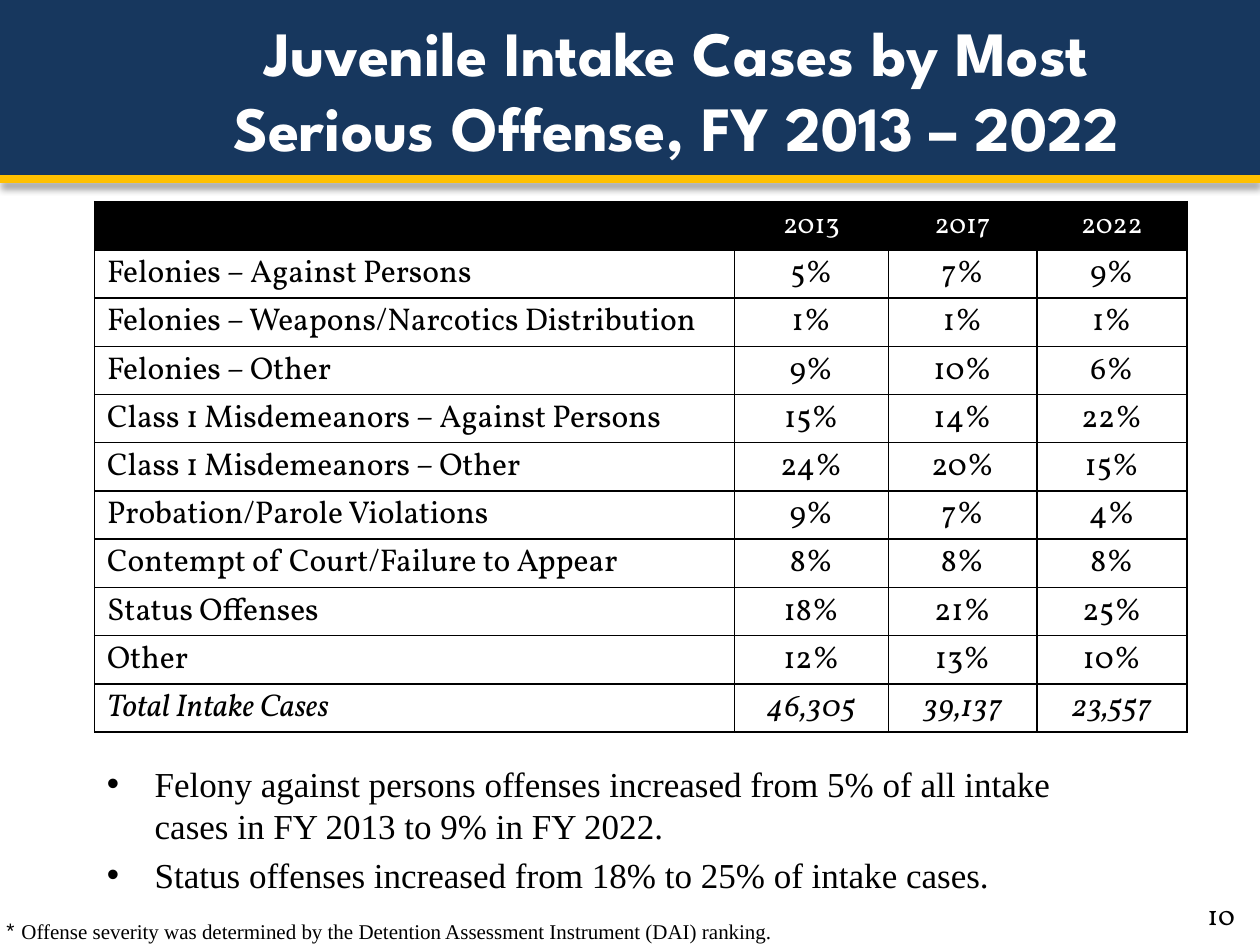
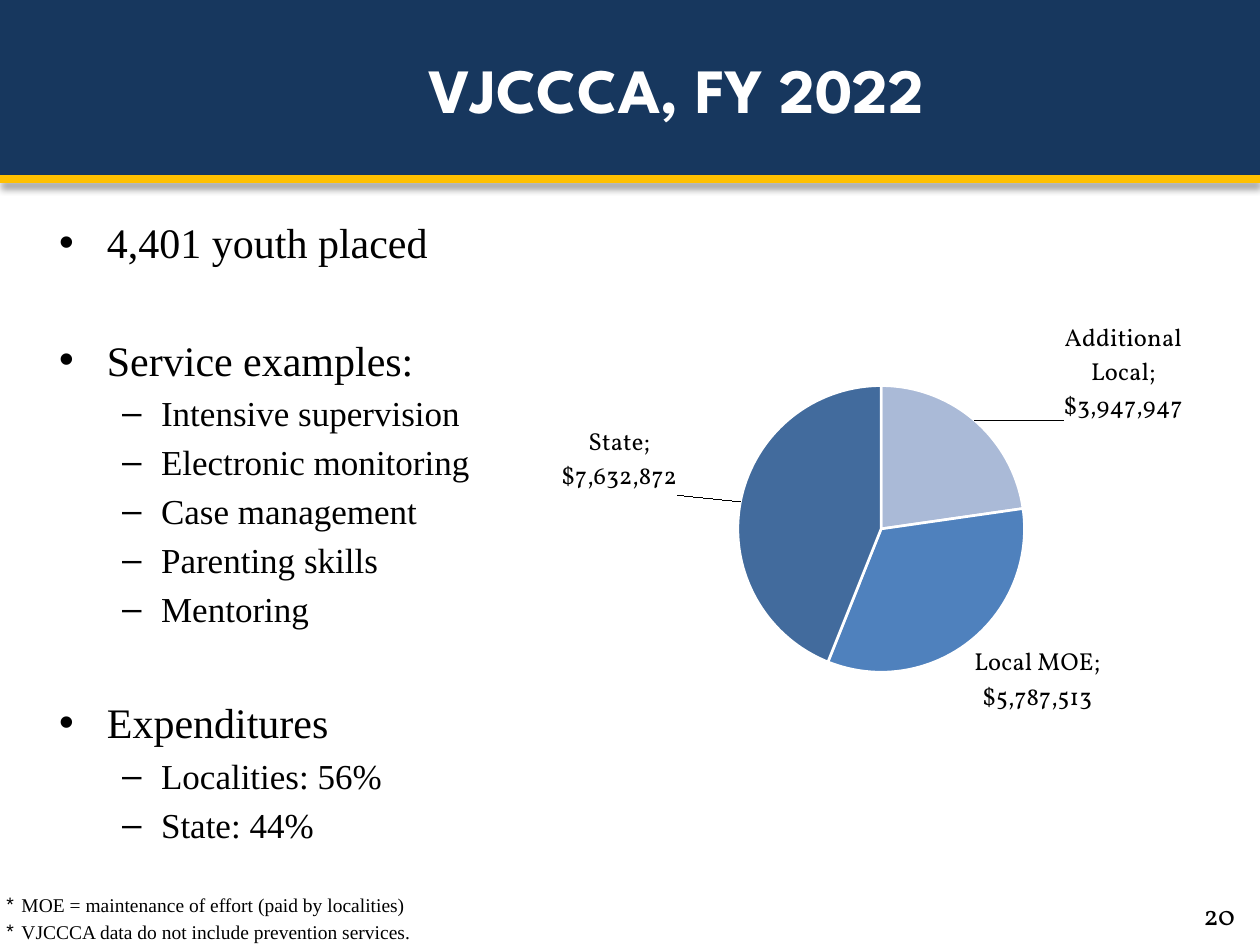
from copy import deepcopy

from pptx import Presentation
from pptx.chart.data import CategoryChartData as ChartData
from pptx.dml.color import RGBColor
from pptx.enum.chart import XL_CHART_TYPE as Kind, XL_LABEL_POSITION as Spot
from pptx.enum.shapes import MSO_CONNECTOR as Link, MSO_SHAPE as Shape
from pptx.enum.text import MSO_ANCHOR as Anchor, MSO_AUTO_SIZE as Fit, PP_ALIGN as Align
from pptx.oxml import parse_xml
from pptx.oxml.ns import nsdecls, qn
from pptx.util import Inches, Pt

NAVY = RGBColor(0x17, 0x37, 0x5E)
GOLD = RGBColor(0xFF, 0xC0, 0x00)
BLACK = RGBColor(0, 0, 0)
WHITE = RGBColor(0xFF, 0xFF, 0xFF)
SLICES = [RGBColor(0xAA, 0xBA, 0xD7), RGBColor(0x4F, 0x81, 0xBD), RGBColor(0x42, 0x6B, 0x9D)]

HEAD, SERIF, OLD = "League Spartan", "Times New Roman", "Vollkorn"
NOTE_BOX = (0, 7.16, 9.08, 0.33)

YEARS = ["", "2013", "2017", "2022"]
CASES = [
    ("Felonies – Against Persons", "5%", "7%", "9%"),
    ("Felonies – Weapons/Narcotics Distribution", "1%", "1%", "1%"),
    ("Felonies – Other", "9%", "10%", "6%"),
    ("Class 1 Misdemeanors – Against Persons", "15%", "14%", "22%"),
    ("Class 1 Misdemeanors – Other", "24%", "20%", "15%"),
    ("Probation/Parole Violations", "9%", "7%", "4%"),
    ("Contempt of Court/Failure to Appear", "8%", "8%", "8%"),
    ("Status Offenses", "18%", "21%", "25%"),
    ("Other", "12%", "13%", "10%"),
    ("Total Intake Cases", "46,305", "39,137", "23,557"),
]
TRENDS = [
    "Felony against persons offenses increased from 5% of all intake cases in FY 2013 "
    "to 9% in FY 2022.",
    "Status offenses increased from 18% to 25% of intake cases.",
]
TOPICS = [
    ("4,401 youth placed", []),
    ("Service examples:", ["Intensive supervision", "Electronic monitoring",
                           "Case management", "Parenting skills", "Mentoring"]),
    ("Expenditures", ["Localities: 56%", "State: 44%"]),
]
FUNDS = {"Additional Local": 3947947, "Local MOE": 5787513, "State": 7632872}


def inches(box):
    return [Inches(n) for n in box]


def style(para, font, size, color=BLACK, bold=False, slant=False):
    for run in para.runs:
        face = run.font
        face.name, face.size, face.bold, face.italic = font, Pt(size), bold, slant
        face.color.rgb = color


def text_box(slide, box, anchor=Anchor.TOP):
    frame = slide.shapes.add_textbox(*inches(box)).text_frame
    frame.word_wrap = True
    frame.vertical_anchor = anchor
    return frame


def bullet(frame, text, size, mark="•", left=0.38, hang=0.38, gap=0):
    """Add a hanging item; gap is extra space before it, in points."""
    first = not frame.text
    para = frame.paragraphs[0] if first else frame.add_paragraph()
    para.text = text
    props = para._p.get_or_add_pPr()
    props.set("marL", str(Inches(left)))
    props.set("indent", str(-Inches(hang)))
    props.append(parse_xml(f'<a:buFont {nsdecls("a")} typeface="Arial"/>'))
    props.append(parse_xml(f'<a:buChar {nsdecls("a")} char="{mark}"/>'))
    para.space_before = Pt(0 if first else size * 0.2 + gap)
    style(para, SERIF, size)


def notes(slide, lines, size):
    frame = text_box(slide, NOTE_BOX, Anchor.BOTTOM)
    frame.margin_left, frame.margin_top, frame.margin_bottom = Inches(0.05), 0, 0
    for line in lines:
        bullet(frame, line, size, "*", 0.12, 0.12)


def band(slide, box):
    left, top, width, height = inches(box)
    block = slide.shapes.add_shape(Shape.RECTANGLE, left, top, width, height)
    block.shadow.inherit = False
    block.fill.solid()
    block.fill.fore_color.rgb = NAVY
    block.line.fill.background()
    base = top + height
    rule = slide.shapes.add_connector(Link.STRAIGHT, left, base, left + width, base)
    rule.line.color.rgb = GOLD
    rule.line.width = Pt(4.5)
    rule.element.spPr.append(parse_xml(
        f'<a:effectLst {nsdecls("a")}><a:outerShdw blurRad="{Pt(4)}" dist="{Pt(3)}" '
        'dir="5400000" rotWithShape="0"><a:srgbClr val="000000"><a:alpha val="40000"/>'
        '</a:srgbClr></a:outerShdw></a:effectLst>'))


def base_slide(deck, text, number):
    """Add a slide with the band, the title and the page number."""
    slide = deck.slides.add_slide(deck.slide_layouts[5])
    band(slide, (0, 0, 10, 1.42))
    title = slide.shapes.title
    slide.shapes.element.append(title.element)
    title.left, title.top, title.width, title.height = inches((1.41, 0.08, 7.92, 1.25))
    frame = title.text_frame
    frame.text = text
    frame.word_wrap, frame.auto_size = True, Fit.NONE
    frame.vertical_anchor = Anchor.MIDDLE
    para = frame.paragraphs[0]
    para.alignment = Align.CENTER
    style(para, HEAD, 36, WHITE, bold=True)
    page = text_box(slide, (9.32, 7.05, 0.58, 0.42), Anchor.MIDDLE)
    page.text = str(number)
    page.paragraphs[0].alignment = Align.RIGHT
    style(page.paragraphs[0], OLD, 16)
    return slide


def edge(cell):
    props = cell._tc.get_or_add_tcPr()
    for place, side in enumerate(("lnL", "lnR", "lnT", "lnB")):
        props.insert(place, parse_xml(
            f'<a:{side} {nsdecls("a")} w="{Pt(1)}"><a:solidFill>'
            f'<a:srgbClr val="{BLACK}"/></a:solidFill></a:{side}>'))


def case_table(slide, box):
    rows = [YEARS, *CASES]
    table = slide.shapes.add_table(len(rows), len(YEARS), *inches(box)).table
    table.first_row = table.horz_banding = False
    for col, width in zip(table.columns, (5.08, 1.22, 1.18, 1.19)):
        col.width = Inches(width)
    for r, row in enumerate(rows):
        for c, text in enumerate(row):
            cell = table.cell(r, c)
            cell.text = text
            cell.vertical_anchor = Anchor.MIDDLE
            cell.margin_left = Inches(0.01 if c else 0.1)
            cell.margin_right = cell.margin_top = Inches(0.01)
            cell.margin_bottom = 0
            para = cell.text_frame.paragraphs[0]
            para.alignment = Align.CENTER if c else Align.LEFT
            if r:
                cell.fill.background()
                style(para, OLD, 18, slant=r == len(CASES))
            else:
                cell.fill.solid()
                cell.fill.fore_color.rgb = BLACK
                style(para, OLD, 16, WHITE)
            edge(cell)


def layout(x, y, size=None):
    """Return a chart layout: a place with a size, or a shift without one."""
    parts = {"x": x, "y": y}
    if size:
        parts = {"layoutTarget": "inner", "xMode": "edge", "yMode": "edge",
                 **parts, "w": size[0], "h": size[1]}
    inner = "".join(f'<c:{tag} val="{val}"/>' for tag, val in parts.items())
    return parse_xml(f'<c:layout {nsdecls("c")}><c:manualLayout>{inner}'
                     '</c:manualLayout></c:layout>')


def shift(labels, point, x, y):
    """Move one point's label away from its usual place."""
    label = parse_xml(f'<c:dLbl {nsdecls("c")}><c:idx val="{point}"/></c:dLbl>')
    label.append(layout(x, y))
    for part in labels:
        if part.tag not in (qn("c:dLbl"), qn("c:showLeaderLines")):
            label.append(deepcopy(part))
    labels.insert(len(labels.findall(qn("c:dLbl"))), label)


def fund_pie(slide, box):
    data = ChartData()
    data.categories = list(FUNDS)
    data.add_series("Series 1", list(FUNDS.values()))
    chart = slide.shapes.add_chart(Kind.PIE, *inches(box), data).chart
    chart.has_title = chart.has_legend = False
    chart.font.name, chart.font.size = OLD, Pt(14)
    chart.font.color.rgb = BLACK
    area = chart.element.find(".//" + qn("c:plotArea"))
    for old in area.findall(qn("c:layout")):
        area.remove(old)
    area.insert(0, layout(0.32, 0.19, (0.41, 0.55)))

    plot = chart.plots[0]
    plot.vary_by_categories = True
    series = plot.series[0]
    for n, color in enumerate(SLICES):
        look = series.points[n].format
        look.fill.solid()
        look.fill.fore_color.rgb = color
        look.line.color.rgb = WHITE
        look.line.width = Pt(1.5)

    labels = series.data_labels
    labels.show_value = labels.show_category_name = True
    labels.show_percentage = labels.show_legend_key = False
    labels.position = Spot.OUTSIDE_END
    labels.number_format, labels.number_format_is_linked = '"$"#,##0', False
    labels.font.name, labels.font.size = OLD, Pt(14)
    labels.font.color.rgb = BLACK
    root = labels._element
    mark = parse_xml(f'<c:separator {nsdecls("c")}>; </c:separator>')
    lead = root.find(qn("c:showLeaderLines"))
    if lead is None:
        root.append(mark)
    else:
        lead.addprevious(mark)
    shift(root, 0, 0.12, 0.02)
    shift(root, 2, -0.08, -0.01)


def topic_list(slide, box):
    frame = text_box(slide, box)
    for head, items in TOPICS:
        bullet(frame, head, 24, gap=33.6)
        for item in items:
            bullet(frame, item, 20, "–", 0.81, 0.31)


def intake(deck):
    slide = base_slide(deck, "Juvenile Intake Cases by Most Serious Offense, FY 2013 – 2022", 10)
    notes(slide, ["Offense severity was determined by the Detention Assessment "
                  "Instrument (DAI) ranking."], 12)
    frame = text_box(slide, (0.75, 6, 8.33, 1.16))
    for trend in TRENDS:
        bullet(frame, trend, 20)
    case_table(slide, (0.75, 1.6, 8.67, 4.21))


def funding(deck):
    slide = base_slide(deck, "VJCCCA, FY 2022", 20)
    topic_list(slide, (0.37, 1.67, 9.21, 5.42))
    notes(slide, ["MOE = maintenance of effort (paid by localities)",
                  "VJCCCA data do not include prevention services."], 11.1)
    fund_pie(slide, (4.08, 2.26, 5.55, 4.17))


def main():
    deck = Presentation()
    deck.slide_width, deck.slide_height = Inches(10), Inches(7.5)
    intake(deck)
    funding(deck)
    deck.save("out.pptx")


if __name__ == "__main__":
    main()
